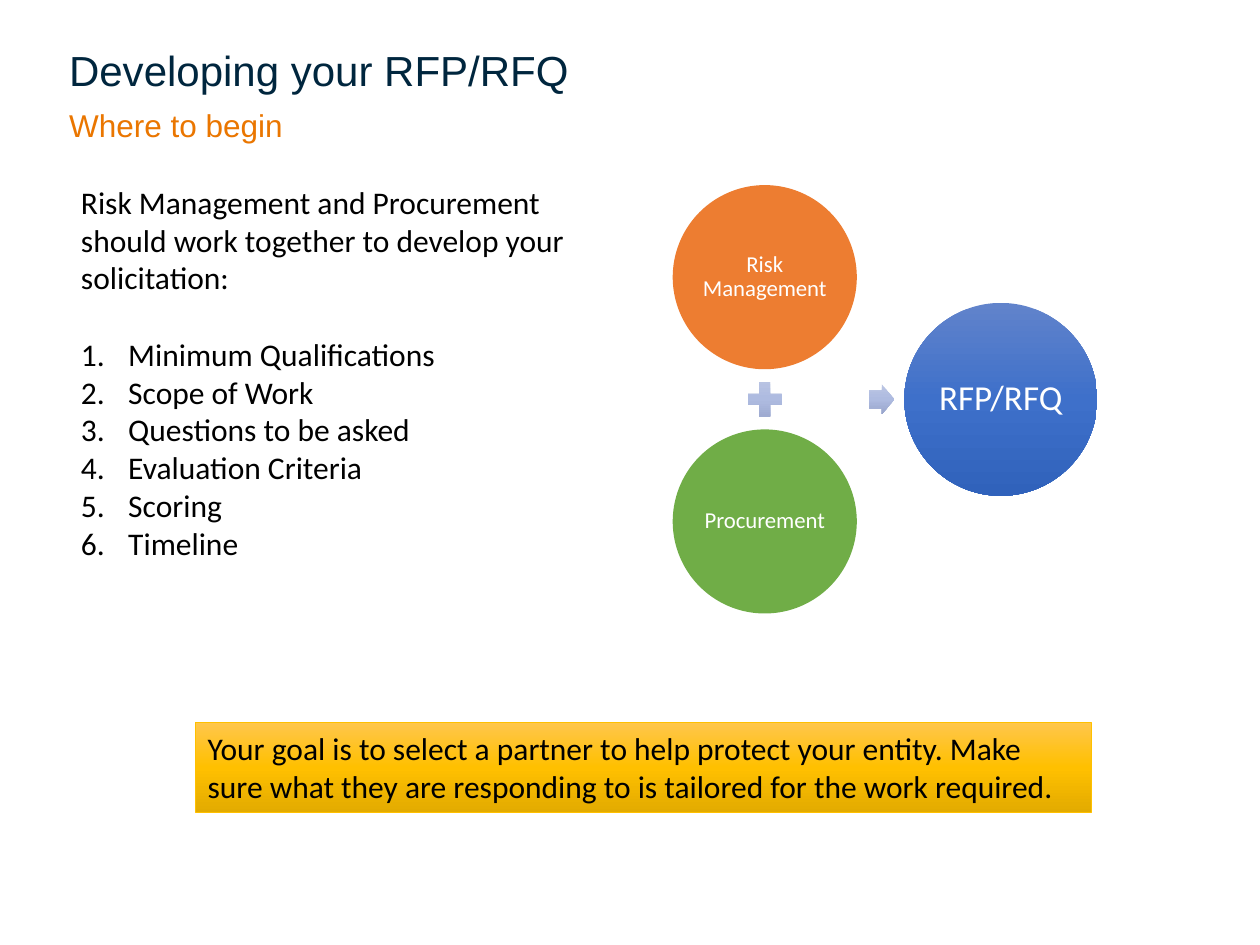
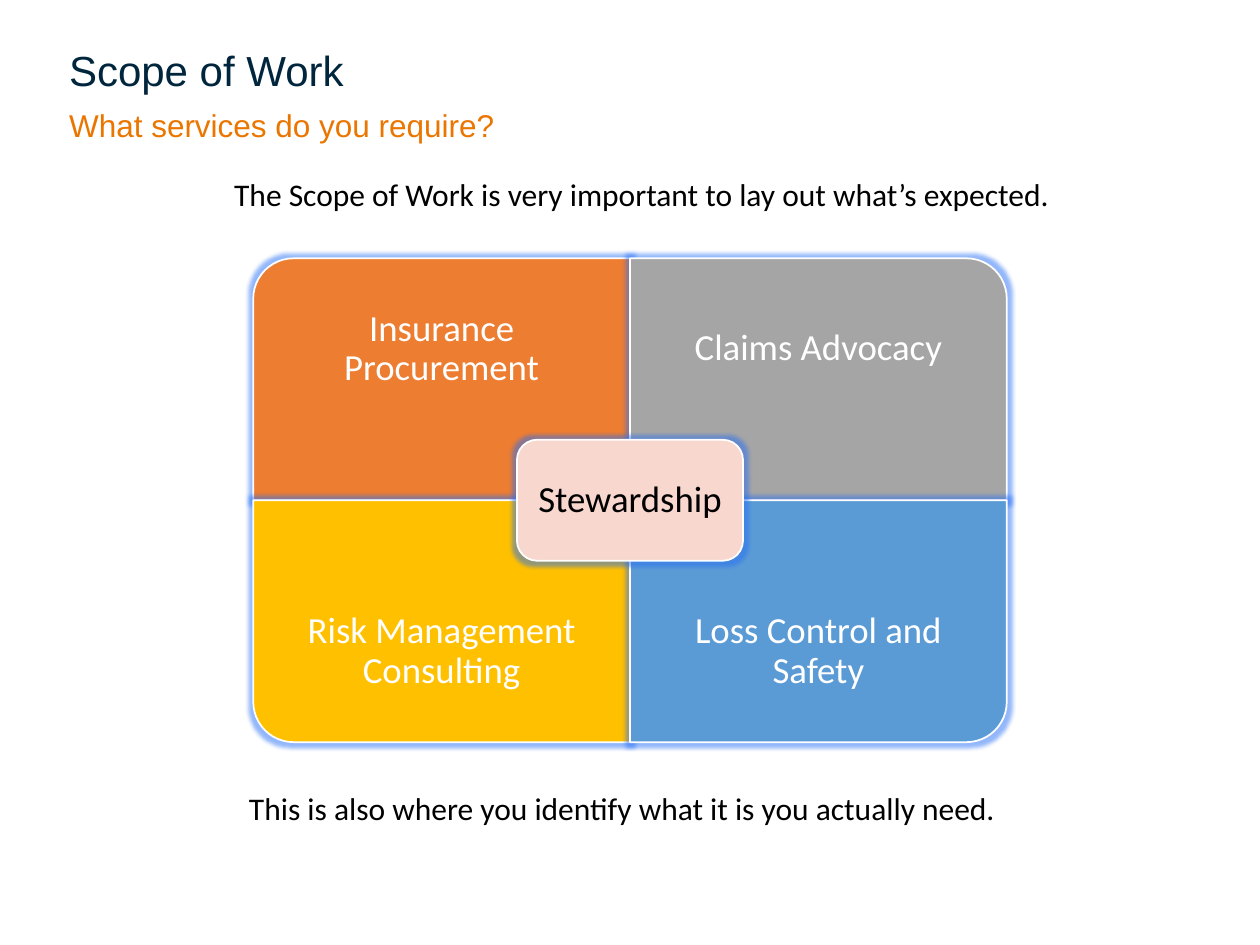
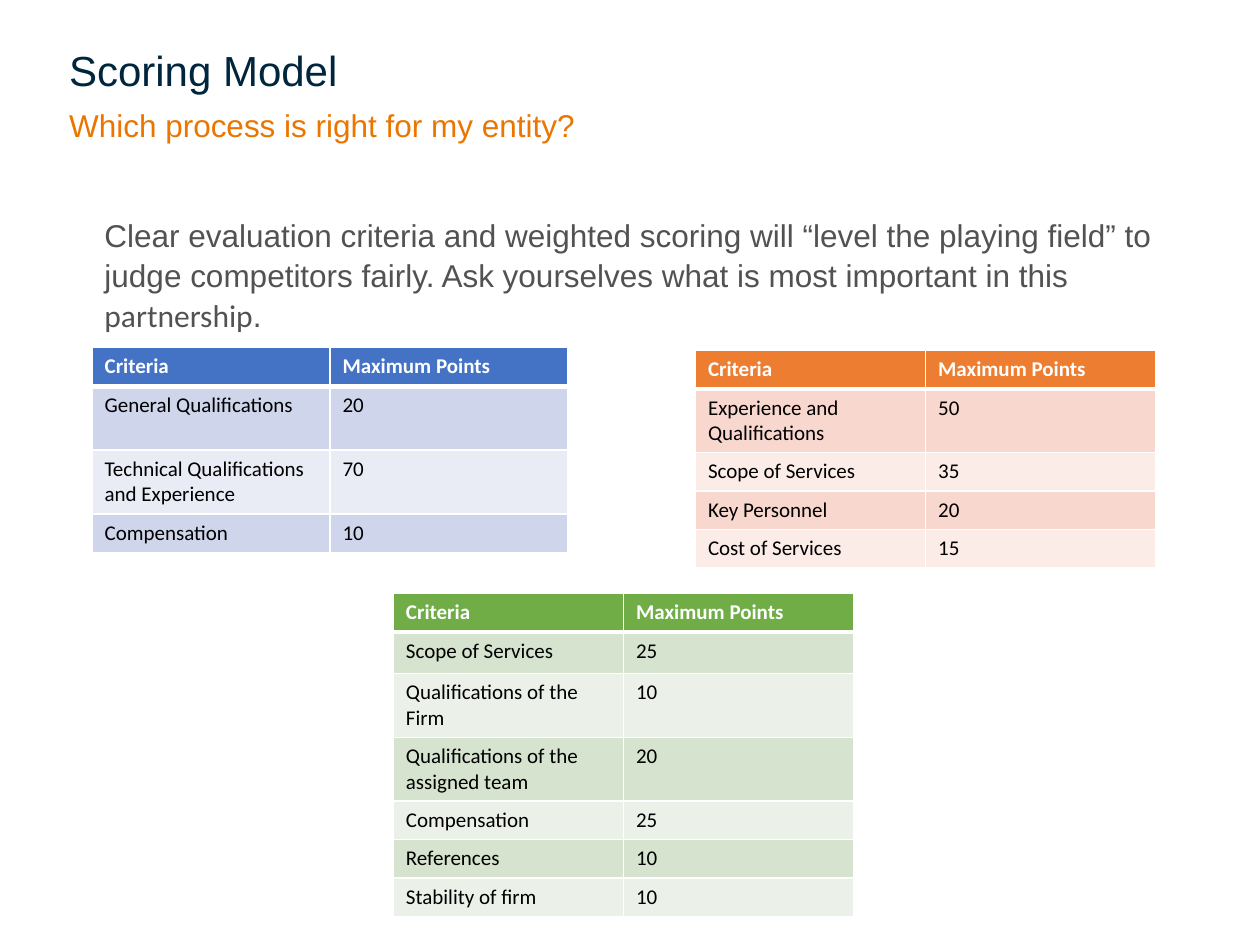
import copy

import pptx
import pptx.util
import pptx.dml.color
import pptx.enum.shapes
import pptx.enum.text
import pptx.oxml
import pptx.oxml.ns
import lxml.etree

Pt = pptx.util.Pt
RGBColor = pptx.dml.color.RGBColor
Shape = pptx.enum.shapes.MSO_SHAPE
Anchor = pptx.enum.text.MSO_ANCHOR
Align = pptx.enum.text.PP_ALIGN
qn = pptx.oxml.ns.qn

WHITE = RGBColor(0xFF, 0xFF, 0xFF)
BLACK = RGBColor(0x00, 0x00, 0x00)
NAVY = RGBColor(0x00, 0x26, 0x3E)
AMBER = RGBColor(0xEA, 0x76, 0x00)
SLATE = RGBColor(0x52, 0x52, 0x52)
ORANGE = RGBColor(0xED, 0x7D, 0x31)
PEACH = RGBColor(0xF8, 0xD7, 0xCE)
BLUSH = RGBColor(0xFC, 0xEC, 0xE8)
GREEN = RGBColor(0x70, 0xAD, 0x47)
SAGE = RGBColor(0xD5, 0xE3, 0xCF)
MIST = RGBColor(0xEB, 0xF1, 0xE9)
BLUE = RGBColor(0x44, 0x72, 0xC4)
LILAC = RGBColor(0xCF, 0xD5, 0xEA)
PALE = RGBColor(0xE9, 0xEB, 0xF5)
GREY = RGBColor(0xA5, 0xA5, 0xA5)
GOLD = RGBColor(0xFF, 0xC0, 0x00)
SKY = RGBColor(0x5B, 0x9B, 0xD5)
GLOW = RGBColor(0x26, 0x6F, 0xF5)
SOFT = [RGBColor(0xBB, 0xC5, 0xE3), RGBColor(0xAE, 0xBB, 0xE0), RGBColor(0x98, 0xA4, 0xCB)]
DEEP = [RGBColor(0x61, 0x83, 0xCB), RGBColor(0x3E, 0x70, 0xCA), RGBColor(0x30, 0x62, 0xBB)]
HONEY = [RGBColor(0xFF, 0xC6, 0x4B), GOLD, RGBColor(0xE3, 0xAB, 0x00)]

HEAD = {"name": "Arial", "size": Pt(24)}
LEAD = {"name": "Arial", "size": Pt(18)}
BODY = {"name": "Calibri", "size": Pt(18)}
NODE = {"name": "Calibri", "size": Pt(13)}
GOAL = {"name": "Calibri", "size": Pt(20)}
QUAD = {"name": "Calibri", "size": Pt(21)}
CELL = {"name": "Calibri", "size": Pt(12), "bold": False}
TOP = {**CELL, "bold": True}
LEFT = {"alignment": Align.LEFT}
MID = {"alignment": Align.CENTER, "line_spacing": 0.9}


def apply(item, form):
    for key, value in form.items():
        setattr(item, key, value)


def add_run(para, text, font, ink):
    run = para.add_run()
    run.text = text
    apply(run.font, font)
    run.font.color.rgb = ink


def write(frame, lines, font, ink, form=LEFT, frame_form=None):
    apply(frame, {"word_wrap": True, **(frame_form or {})})
    for i, line in enumerate(lines):
        para = frame.add_paragraph() if i else frame.paragraphs[0]
        apply(para, form)
        add_run(para, line, font, ink)


def inset(size, anchor=Anchor.MIDDLE):
    sides = ("left", "top", "right", "bottom")
    return {"vertical_anchor": anchor, **{f"margin_{side}": Pt(size) for side in sides}}


def add_text(slide, box, lines, font, ink, form=LEFT, frame_form=None):
    frame = slide.shapes.add_textbox(*map(Pt, box)).text_frame
    write(frame, lines, font, ink, form, frame_form)
    return frame


def shade(fill, shape, tones):
    fill.gradient()
    fill.gradient_angle = 270
    stop = shape._element.spPr.find(".//" + qn("a:gs"))
    stop.addnext(copy.deepcopy(stop))
    for i, (stop, tone) in enumerate(zip(fill.gradient_stops, tones)):
        stop.position = i / 2
        stop.color.rgb = tone


def add_shape(slide, kind, box, paint, edge=None, width=1):
    shape = slide.shapes.add_shape(kind, *map(Pt, box))
    shape.shadow.inherit = False
    if isinstance(paint, list):
        shade(shape.fill, shape, paint)
    else:
        shape.fill.solid()
        shape.fill.fore_color.rgb = paint
    if edge is None:
        shape.line.fill.background()
    else:
        shape.line.color.rgb = edge
        shape.line.width = Pt(width)
    return shape


def add_glow(shape):
    sub = lxml.etree.SubElement
    glow = sub(shape._element.spPr.find(qn("a:effectLst")), qn("a:glow"), rad=str(Pt(5)))
    tint = sub(glow, qn("a:srgbClr"), val=str(GLOW))
    sub(tint, qn("a:alpha"), val="50000")


def add_heads(slide, box, title, lead):
    x, y, w, h = box
    add_text(slide, (x, y, w, 51.8), [title], HEAD, NAVY, LEFT,
             {"vertical_anchor": Anchor.BOTTOM})
    add_text(slide, (x, y + 54.8, w, h - 54.8), [lead], LEAD, AMBER, LEFT,
             {"margin_top": 0})


def add_steps(slide, box, intro, steps):
    frame = add_text(slide, box, [intro, *steps], BODY, BLACK)
    for i, para in enumerate(frame.paragraphs[1:]):
        props = para._p.get_or_add_pPr()
        props.set("marL", str(Pt(27)))
        props.set("indent", str(-Pt(27)))
        lxml.etree.SubElement(props, qn("a:buFont"), typeface="+mj-lt")
        lxml.etree.SubElement(props, qn("a:buAutoNum"), type="arabicPeriod")
        if i == 0:
            para.space_before = Pt(22)


def add_sum(slide, box, parts, goal):
    x, y, w, h = box
    disc, plus, big = 105.2, 26.6, 110.2
    mid = y + h / 2
    for i, (name, paint) in enumerate(parts):
        spot = (x, y + i * (h - disc), disc, disc)
        node = add_shape(slide, Shape.OVAL, spot, paint)
        write(node.text_frame, [name], NODE, WHITE, MID, inset(1.4))
    add_shape(slide, Shape.MATH_PLUS,
              (x + (disc - plus) / 2, mid - plus / 2, plus, plus), SOFT)
    arrow = add_shape(slide, Shape.RIGHT_ARROW, (x + 112.3, mid - 8.6, 14.4, 17.2), SOFT)
    arrow.adjustments[0] = 0.6
    node = add_shape(slide, Shape.OVAL, (x + w - big, mid - big / 2, big, big), DEEP)
    write(node.text_frame, [goal], GOAL, WHITE, MID, inset(2.2))


def add_banner(slide, box, text):
    banner = add_shape(slide, Shape.RECTANGLE, box, HONEY, GOLD, 0.5)
    write(banner.text_frame, [text], BODY, BLACK, LEFT, {"vertical_anchor": Anchor.TOP})


def add_quads(slide, box, quads, core):
    x, y, w, h = box
    wide, tall = w / 2, h / 2
    for i, (name, paint, turn) in enumerate(quads):
        row, col = divmod(i, 2)
        left, top = x + col * wide, y + row * tall
        across, down = (tall, wide) if turn % 180 else (wide, tall)
        spot = (left + (wide - across) / 2, top + (tall - down) / 2, across, down)
        quad = add_shape(slide, Shape.ROUND_1_RECTANGLE, spot, paint, WHITE)
        quad.rotation = turn
        add_glow(quad)
        add_text(slide, (left, top + row * tall / 4, wide, tall * 0.75), [name],
                 QUAD, WHITE, MID, inset(11.5))
    spot = (x + w * 0.35, y + h * 0.375, w * 0.3, h * 0.25)
    hub = add_shape(slide, Shape.ROUNDED_RECTANGLE, spot, PEACH, WHITE)
    add_glow(hub)
    write(hub.text_frame, [core], QUAD, BLACK, MID, inset(6.5))


def add_edges(cell, row):
    props = cell._tc.get_or_add_tcPr()
    heavy = {(0, "B"), (1, "T")}
    for side in "LRTB":
        width = Pt(3 if (row, side) in heavy else 1)
        line = lxml.etree.SubElement(props, qn(f"a:ln{side}"), w=str(width))
        fill = lxml.etree.SubElement(line, qn("a:solidFill"))
        lxml.etree.SubElement(fill, qn("a:srgbClr"), val=str(WHITE))


def add_scores(slide, box, tones, scores, highs):
    x, y, w = box
    head, *bands = tones
    rows = [("Criteria", "Maximum Points"), *scores]
    spot = map(Pt, (x, y, w, sum(highs)))
    table = slide.shapes.add_table(len(rows), 2, *spot).table
    table.horz_banding = False
    for col in table.columns:
        col.width = Pt(w / 2)
    for r, (row, high) in enumerate(zip(rows, highs)):
        table.rows[r].height = Pt(high)
        for c, text in enumerate(row):
            cell = table.cell(r, c)
            add_edges(cell, r)
            cell.fill.solid()
            cell.fill.fore_color.rgb = bands[(r - 1) % 2] if r else head
            font, ink = (CELL, BLACK) if r else (TOP, WHITE)
            write(cell.text_frame, [str(text)], font, ink)


def start(deck, title, lead):
    slide = deck.slides.add_slide(deck.slide_layouts[6])
    add_heads(slide, (32.4, 5.8, 648, 95), title, lead)
    return slide


def make_rfp(deck):
    slide = start(deck, "Developing your RFP/RFQ", "Where to begin")
    add_sum(slide, (384.4, 105.8, 242.6, 244.8),
            [("Risk Management", ORANGE), ("Procurement", GREEN)], "RFP/RFQ")
    add_steps(slide, (39.2, 101, 316.8, 247),
              "Risk Management and Procurement should work together to develop "
              "your solicitation:",
              ["Minimum Qualifications", "Scope of Work", "Questions to be asked",
               "Evaluation Criteria", "Scoring", "Timeline"])
    add_banner(slide, (111.6, 413, 512, 51),
               "Your goal is to select a partner to help protect your entity. Make sure "
               "what they are responding to is tailored for the work required.")


def make_scope(deck):
    slide = start(deck, "Scope of Work", "What services do you require?")
    add_text(slide, (126.7, 96.2, 503.3, 87.8),
             ["The Scope of Work is very important to lay out what’s expected."], BODY, BLACK)
    add_text(slide, (135.2, 447.4, 458.6, 29),
             ["This is also where you identify what it is you actually need."], BODY, BLACK)
    add_quads(slide, (144.7, 147.6, 430.6, 276.5),
              [("Insurance Procurement", ORANGE, 270), ("Claims Advocacy", GREY, 0),
               ("Risk Management Consulting", GOLD, 180),
               ("Loss Control and Safety", SKY, 90)], "Stewardship")


def make_scores(deck):
    slide = start(deck, "Scoring Model", "Which process is right for my entity?")
    frame = add_text(slide, (52.6, 119, 620.6, 342.7),
                     ["Clear evaluation criteria and weighted scoring will “level the playing "
                      "field” to judge competitors fairly. Ask yourselves what is most "
                      "important in this "], LEAD, SLATE, {"line_spacing": 1.05})
    para = frame.paragraphs[0]
    add_run(para, "partnership", BODY, SLATE)
    add_run(para, ".", LEAD, SLATE)
    one, two = 22, 36.5
    add_scores(slide, (52.6, 198.7, 272), (BLUE, LILAC, PALE),
               [("General Qualifications", 20),
                ("Technical Qualifications and Experience", 70),
                ("Compensation", 10)], (one, two, two, one))
    add_scores(slide, (397.4, 200.2, 263), (ORANGE, PEACH, BLUSH),
               [("Experience and Qualifications", 50), ("Scope of Services", 35),
                ("Key Personnel", 20), ("Cost of Services", 15)],
               (one, two, one, one, one))
    add_scores(slide, (224.8, 339.1, 263), (GREEN, SAGE, MIST),
               [("Scope of Services", 25), ("Qualifications of the Firm", 10),
                ("Qualifications of the assigned team", 20), ("Compensation", 25),
                ("References", 10), ("Stability of firm", 10)],
               (one, 23.8, two, two, one, one, one))


def main():
    deck = pptx.Presentation()
    apply(deck, {"slide_width": Pt(720), "slide_height": Pt(540)})
    for make in (make_rfp, make_scope, make_scores):
        make(deck)
    deck.save("out.pptx")


if __name__ == "__main__":
    main()
